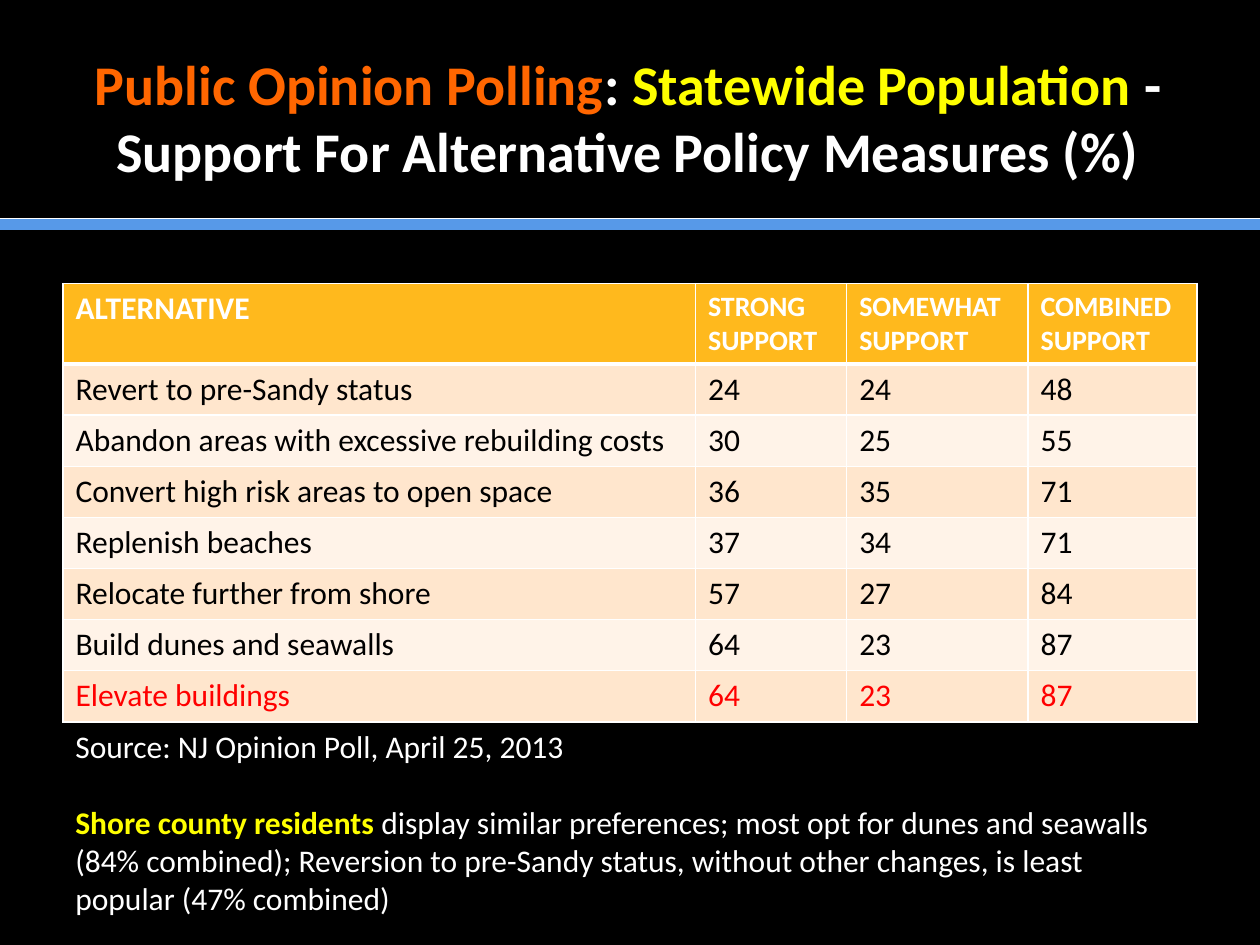
import pptx
import pptx.util
import pptx.dml.color
import pptx.enum.shapes
import pptx.enum.text
import pptx.oxml
import pptx.oxml.ns

Inches = pptx.util.Inches
Pt = pptx.util.Pt


def rgb(color):
    return pptx.dml.color.RGBColor.from_string(color)


def add_run(p, text, size=18, color="FFFFFF", bold=False):
    r = p.add_run()
    r.text = text
    r.font.name = "Calibri"
    r.font.size = Pt(size)
    r.font.bold = bold
    r.font.color.rgb = rgb(color)


prs = pptx.Presentation()
prs.slide_width = Inches(10)
prs.slide_height = Inches(7.5)
s = prs.slides.add_slide(prs.slide_layouts[6])
s.background.fill.solid()
s.background.fill.fore_color.rgb = rgb("000000")

# Rule under the title
for y, color, width in [(1.78, "5799E8", 7), (1.73, "FFFFFF", 0.5)]:
    line = s.shapes.add_connector(pptx.enum.shapes.MSO_CONNECTOR.STRAIGHT,
                                  Inches(0), Inches(y), Inches(10), Inches(y))
    line.line.color.rgb = rgb(color)
    line.line.width = Pt(width)
    line._element.spPr.append(pptx.oxml.parse_xml(
        f"<a:effectLst {pptx.oxml.ns.nsdecls('a')}/>"))

# Title
tf = s.shapes.add_textbox(Inches(0.2), Inches(0.3), Inches(9.57), Inches(1.25)).text_frame
tf.word_wrap = True
tf.vertical_anchor = pptx.enum.text.MSO_ANCHOR.MIDDLE
p = tf.paragraphs[0]
p.alignment = pptx.enum.text.PP_ALIGN.CENTER
for text, color in [("Public Opinion Polling", "FF6600"),
                    (": ", "FFFFFF"),
                    ("Statewide Population ", "FFFF00"),
                    ("- Support For Alternative Policy Measures (%)", "FFFFFF")]:
    add_run(p, text, size=32, color=color, bold=True)

# Poll results
rows = [
    ("ALTERNATIVE", "STRONG SUPPORT", "SOMEWHAT SUPPORT", "COMBINED SUPPORT"),
    ("Revert to pre-Sandy status", 24, 24, 48),
    ("Abandon areas with excessive rebuilding costs", 30, 25, 55),
    ("Convert high risk areas to open space", 36, 35, 71),
    ("Replenish beaches", 37, 34, 71),
    ("Relocate further from shore", 57, 27, 84),
    ("Build dunes and seawalls", 64, 23, 87),
    ("Elevate buildings", 64, 23, 87),
]
last = len(rows) - 1
height, header_height = Inches(3.48), Inches(0.64)
table = s.shapes.add_table(len(rows), 4, Inches(0.5), Inches(2.25), Inches(9), height).table
for col, width in zip(table.columns, [5.02, 1.2, 1.44, 1.34]):
    col.width = Inches(width)

for i, row in enumerate(rows):
    header = i == 0
    table.rows[i].height = header_height if header else (height - header_height) // last
    fill = "FFB91D" if header else ("FFE6CD" if i % 2 else "FFF3E8")
    color = "FFFFFF" if header else ("FF0000" if i == last else "000000")
    for j, value in enumerate(row):
        cell = table.cell(i, j)
        add_run(cell.text_frame.paragraphs[0], str(value),
                size=16 if header and j else 18, color=color, bold=header)
        tcPr = cell._tc.get_or_add_tcPr()
        for side in "LRTB":
            thick = (header and side == "B") or (i == 1 and side == "T")
            tcPr.append(pptx.oxml.parse_xml(
                f'<a:ln{side} {pptx.oxml.ns.nsdecls("a")} w="{Pt(3 if thick else 1)}">'
                '<a:solidFill><a:srgbClr val="FFFFFF"/></a:solidFill>'
                f'</a:ln{side}>'))
        cell.fill.solid()
        cell.fill.fore_color.rgb = rgb(fill)

# Source and comment
tf = s.shapes.add_textbox(Inches(0.5), Inches(5.72), Inches(9), Inches(1.62)).text_frame
tf.word_wrap = True
add_run(tf.paragraphs[0], "Source: NJ Opinion Poll, April 25, 2013")
p = tf.add_paragraph()
p.space_before = Pt(22)
add_run(p, "Shore county residents ", color="FFFF00", bold=True)
add_run(p, "display similar preferences; most opt for dunes and seawalls "
           "(84% combined); Reversion to pre-Sandy status, without other changes, "
           "is least popular (47% combined)")

prs.save("out.pptx")
